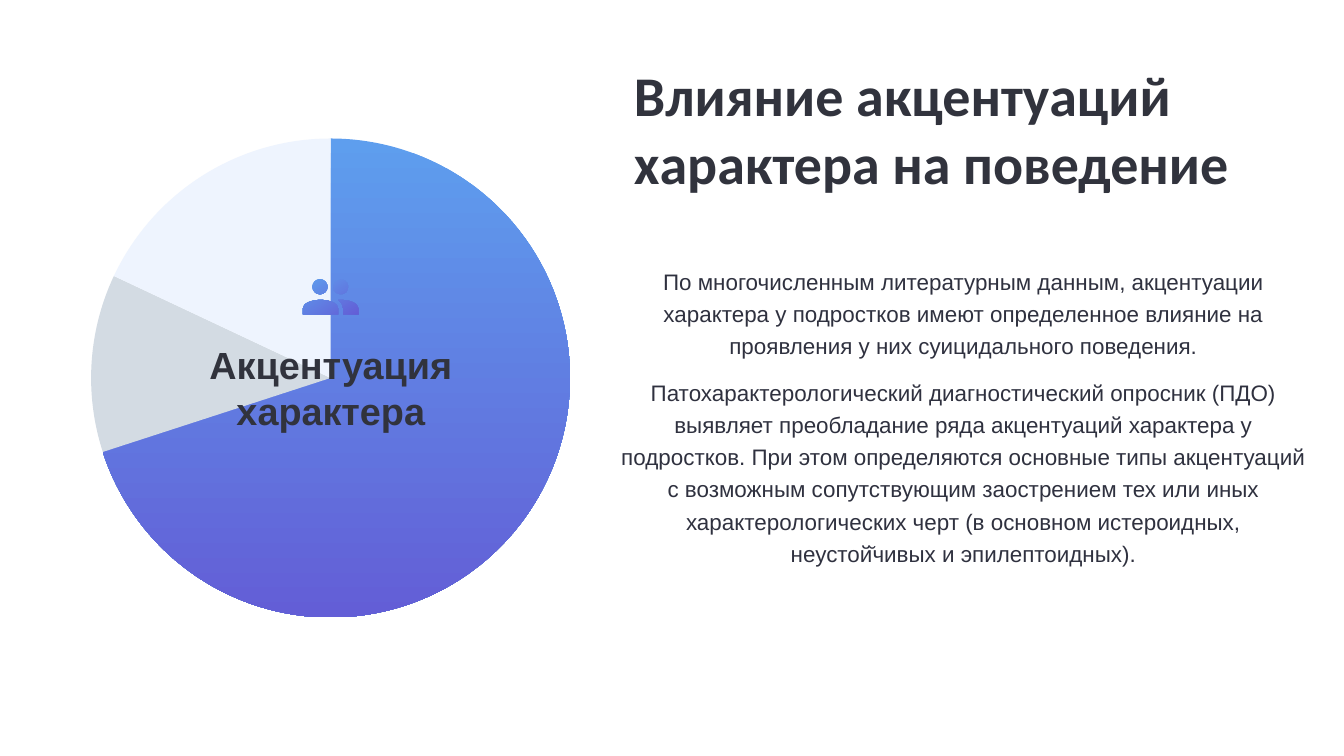
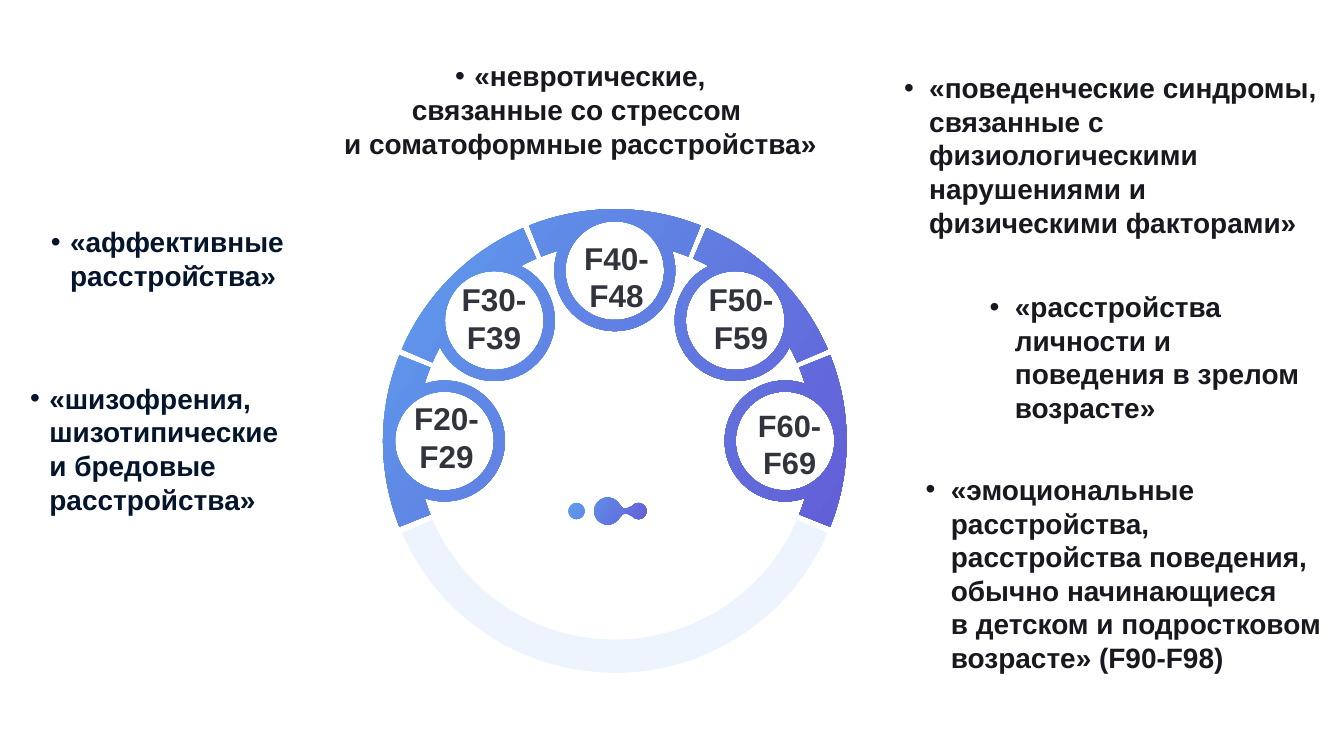
from math import acos, atan2, ceil, cos, degrees, radians, sin, tan

from lxml import etree
from pptx import Presentation
from pptx import util as u
from pptx.chart import data
from pptx.dml.color import RGBColor
from pptx.enum import chart as ch
from pptx.enum import text as t
from pptx.oxml import parse_xml
from pptx.oxml.ns import nsdecls, qn

HUES = {
    "dark": "31333D", "body": "2F313F", "ink": "181820", "navy": "05162C",
    "sky": "5E9EEE", "violet": "635ED6", "grey": "D3DBE3", "pale": "EEF4FE",
}
INSETS = ("margin_left", "margin_right", "margin_top", "margin_bottom")
LEFT, MID = t.PP_ALIGN.LEFT, t.PP_ALIGN.CENTER


def write(box, lines, size, hue, align=MID, face="Arial", bold=True, indent=None,
          spacing=None, before=0, anchor=t.MSO_ANCHOR.MIDDLE):
    """Fill a text box or placeholder; an indent puts a bullet on the first line."""
    frame = box.text_frame
    form = {"word_wrap": True, "auto_size": t.MSO_AUTO_SIZE.NONE,
            "vertical_anchor": anchor, **dict.fromkeys(INSETS, u.Inches(0.06))}
    for key, val in form.items():
        setattr(frame, key, val)
    font = {"size": u.Pt(size), "name": face, "bold": bold}
    for i, line in enumerate(lines):
        para = frame.paragraphs[0] if i == 0 else frame.add_paragraph()
        para.text = line
        para.alignment, para.line_spacing = align, spacing
        para.space_before = u.Pt(before)
        props = para._p.get_or_add_pPr()
        hang = u.Inches(indent) if indent and i == 0 else 0
        props.set("marL", str(hang))
        props.set("indent", str(-hang))
        if hang:
            etree.SubElement(props, qn("a:buFont")).set("typeface", "Arial")
            etree.SubElement(props, qn("a:buChar")).set("char", "•")
        else:
            etree.SubElement(props, qn("a:buNone"))
        for run in para.runs:
            for key, val in font.items():
                setattr(run.font, key, val)
            run.font.color.rgb = RGBColor.from_string(HUES[hue])


def arc(x, y, wide, high, start, end):
    """Curve points on an ellipse, clockwise degrees; control points carry a third item."""
    n = ceil(abs(end - start) / 90)
    step = radians(end - start) / n
    pull = 4 / 3 * tan(step / 4)
    spots = [(x + wide * cos(radians(start)), y + high * sin(radians(start)))]
    for i in range(n):
        a = radians(start) + i * step
        b = a + step
        spots += [
            (x + wide * (cos(a) - pull * sin(a)), y + high * (sin(a) + pull * cos(a)), "bend"),
            (x + wide * (cos(b) + pull * sin(b)), y + high * (sin(b) - pull * cos(b)), "bend"),
            (x + wide * cos(b), y + high * sin(b)),
        ]
    return spots


deck = Presentation()
deck.slide_width, deck.slide_height = u.Inches(26.67), u.Inches(15)

# Slide 1: influence of accentuations
page = deck.slides.add_slide(deck.slide_layouts[1])
title, body = page.placeholders
for box, place in ((title, (12.52, 1.14, 13.04, 2.8)), (body, (12.13, 5.15, 13.98, 7))):
    box.left, box.top, box.width, box.height = map(u.Inches, place)
write(title, ["Влияние акцентуаций характера на поведение"], 80, "dark", LEFT, "Calibri")
write(body, [
    "По многочисленным литературным данным, акцентуации характера у подростков имеют "
    "определенное влияние на проявления у них суицидального поведения.",
    "Патохарактерологический диагностический опросник (ПДО) выявляет преобладание ряда "
    "акцентуаций характера у подростков. При этом определяются основные типы акцентуаций "
    "с возможным сопутствующим заострением тех или иных характерологических черт "
    "(в основном истероидных, неустой̆чивых и эпилептоидных).",
], 32, "body", bold=False, spacing=1.2, before=20, anchor=t.MSO_ANCHOR.TOP)

parts = data.CategoryChartData()
parts.categories = ["1", "2", "3"]
parts.add_series("Series 1", (70, 12, 18))
pie = page.shapes.add_chart(ch.XL_CHART_TYPE.PIE, *map(u.Inches, (1.76, 2.7, 9.6, 9.6)), parts).chart
pie.has_legend = pie.has_title = False
pie.font.size, pie.font.name = u.Pt(10), "Arial"
pie.font.color.rgb = RGBColor.from_string(HUES["body"])
pie.plots[0].vary_by_categories = True
slices = pie.plots[0].series[0].points
for i, hue in ((1, "grey"), (2, "pale")):
    fill = slices[i].format.fill
    fill.solid()
    fill.fore_color.rgb = RGBColor.from_string(HUES[hue])
for i in range(3):
    slices[i].format.line.fill.background()
plot = pie._chartSpace.chart.plotArea
for old in plot.findall(qn("c:layout")):
    plot.remove(old)
frame = "".join(f'<c:{k} val="{v}"/>' for k, v in (
    ("layoutTarget", "inner"), ("xMode", "edge"), ("yMode", "edge"),
    ("x", 0.005), ("y", 0.005), ("w", 0.99), ("h", 0.99)))
plot.insert(0, parse_xml(
    f"<c:layout {nsdecls('c')}><c:manualLayout>{frame}</c:manualLayout></c:layout>"))

label = page.shapes.add_textbox(*map(u.Inches, (3.99, 6.72, 5.15, 1.93)))
write(label, ["Акцентуация характера"], 54, "dark")

people = [arc(x, 5.69, 0.15, 0.15, 0, 360) for x in (6.35, 6.76)]
people.append([(6.01, 6.24)] + arc(6.36, 6.12, 0.35, 0.17, 180, 360) + [(6.71, 6.24)])
people.append([(6.71, 5.95)] + arc(6.76, 6.12, 0.35, 0.17, 270, 360)
              + [(7.11, 6.24), (6.81, 6.24), (6.81, 6.12), (6.78, 6.02)])

# Slide 2: ring of disorder groups
ring = deck.slides.add_slide(deck.slide_layouts[6])
X, Y, OUT, IN = 12.2, 8.75, 4.6, 3.94
DIST, DISC, HOLE = 3.38, 1.2, 0.98
HALF = 21.7
meet = acos((IN**2 + DIST**2 - DISC**2) / (2 * IN * DIST))
turn = degrees(atan2(IN * sin(meet), IN * cos(meet) - DIST))
meet = degrees(meet)
band = []
for mid in range(180, 361, 45):
    cx, cy = X + DIST * cos(radians(mid)), Y + DIST * sin(radians(mid))
    band.append(arc(X, Y, OUT, OUT, mid - HALF, mid + HALF)
                + arc(X, Y, IN, IN, mid + HALF, mid + meet)
                + arc(cx, cy, DISC, DISC, mid + turn, mid + 360 - turn)
                + arc(X, Y, IN, IN, mid - meet, mid - HALF))
    band.append(arc(cx, cy, HOLE, HOLE, 360, 0))
base = [arc(X, Y, OUT, OUT, 23.4, 156.6) + arc(X, Y, IN, IN, 156.6, 23.4)]
drops = [arc(11.44, 10.14, 0.16, 0.16, 0, 360),
         arc(12.06, 10.14, 0.27, 0.27, 28, 332) + [(12.36, 10.08), (12.44, 10.09)]
         + arc(12.67, 10.14, 0.16, 0.16, 220, 500) + [(12.44, 10.19), (12.36, 10.2)]]

blends = [(slices[0].format.fill, 90)]
for sheet, loops, angle in ((page, people, 57), (ring, base, None),
                            (ring, band, 34), (ring, drops, 34)):
    pen = None
    for loop in loops:
        first, *rest = [tuple(map(u.Inches, spot[:2])) for spot in loop]
        if pen is None:
            pen = sheet.shapes.build_freeform(*first, scale=1.0)
        else:
            pen.move_to(*first)
        pen.add_line_segments(rest, close=True)
    form = pen.convert_to_shape()
    # Join each pair of control points and its end point into one curve
    curve = None
    spots = [spot for loop in loops for spot in loop[1:]]
    for node, spot in zip(form._element.findall(".//" + qn("a:lnTo")), spots):
        bent = len(spot) == 3
        if bent and curve is None:
            curve = etree.Element(qn("a:cubicBezTo"))
            node.addprevious(curve)
        if curve is not None:
            curve.append(node[0])
            node.getparent().remove(node)
        if not bent:
            curve = None
    form.shadow.inherit = False
    form.line.fill.background()
    if angle is None:
        form.fill.solid()
        form.fill.fore_color.rgb = RGBColor.from_string(HUES["pale"])
    else:
        blends.append((form.fill, angle))
for fill, angle in blends:
    fill.gradient()
    fill.gradient_angle = 360 - angle
    for stop, hue in zip(fill.gradient_stops, ("sky", "violet")):
        stop.color.rgb = RGBColor.from_string(HUES[hue])

codes = [
    ("F20-F29", 8.12, 7.95, 1.48, 45),
    ("F30-F39", 8.86, 5.6, 1.89, 45),
    ("F40-F48", 11.46, 4.77, 1.55, 45),
    ("F50-F59", 13.76, 5.6, 1.89, 45),
    ("F60-F69", 14.89, 8.08, 1.56, 44),
]
for code, x, y, wide, size in codes:
    box = ring.shapes.add_textbox(*map(u.Inches, (x, y, wide, 1.43)))
    write(box, [code], size, "dark")

notes = [
    ((19.58, 5.68, 6.64, 2.8), "ink", LEFT, 0.5,
     ["«расстройства личности и поведения в зрелом возрасте»"]),
    ((17.88, 1.32, 8.37, 3.5), "ink", LEFT, 0.5,
     ["«поведенческие синдромы, связанные с физиологическими нарушениями "
      "и физическими факторами»"]),
    ((0.95, 4.38, 5.79, 1.5), "navy", LEFT, 0.38, ["«аффективные расстрой̆ства»"]),
    ((0.54, 7.5, 6.82, 2.8), "navy", LEFT, 0.38,
     ["«шизофрения, шизотипические \vи бредовые расстройства»"]),
    ((5.67, 1.07, 11.69, 2.2), "ink", MID, 0.38,
     ["«невротические,", "связанные со стрессом \vи соматоформные расстройства»"]),
    ((18.31, 9.3, 8.17, 4.15), "ink", LEFT, 0.5,
     ["«эмоциональные расстройства, расстройства поведения, обычно начинающиеся "
      "\vв детском и подростковом возрасте» (F90-F98)"]),
]
for place, hue, align, hang, lines in notes:
    box = ring.shapes.add_textbox(*map(u.Inches, place))
    write(box, lines, 40, hue, align, indent=hang)

deck.save("out.pptx")
